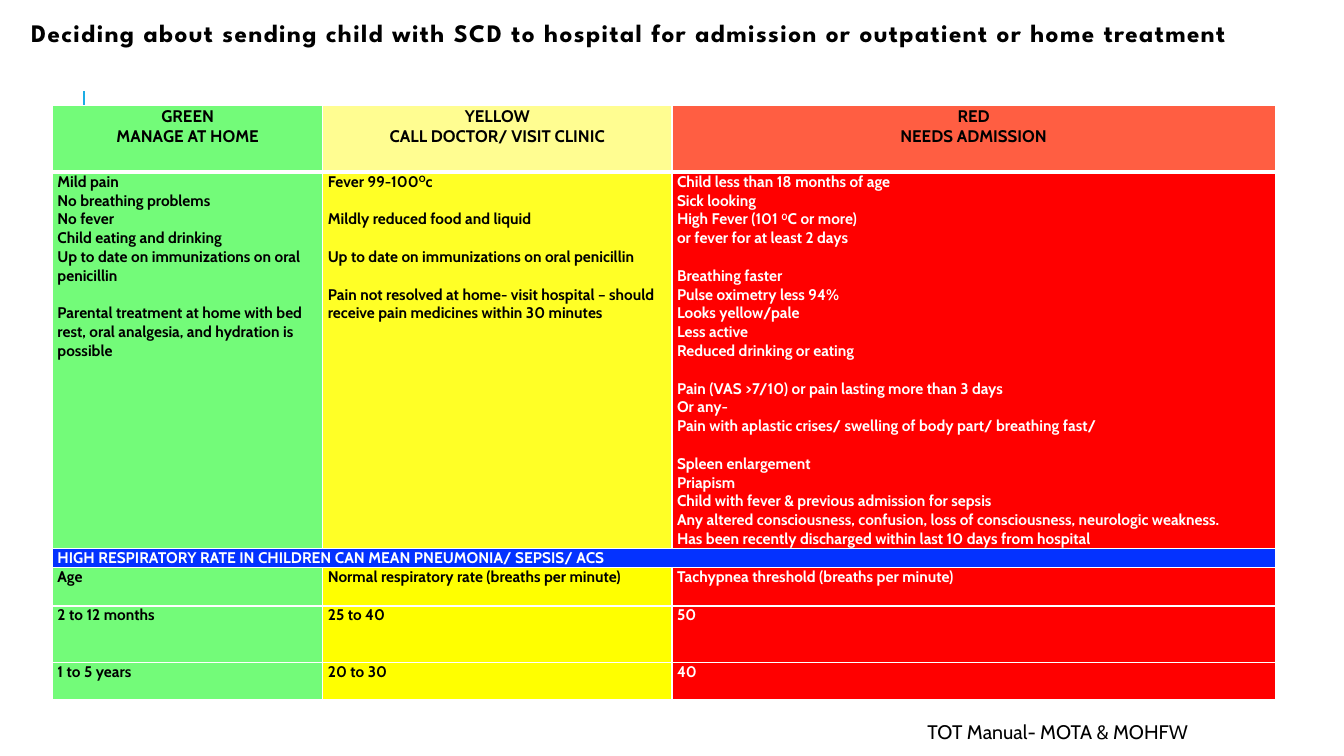
from lxml import etree
from pptx import Presentation
from pptx.dml.color import RGBColor
from pptx.enum.shapes import MSO_CONNECTOR
from pptx.enum.text import MSO_ANCHOR, PP_ALIGN
from pptx.oxml.ns import qn
from pptx.util import Inches, Pt

COLORS = {
    "black": "000000", "white": "FFFFFF", "accent": "1CADE4",
    "green": "73FB79", "pale yellow": "FFFD78", "yellow": "FFFF00",
    "coral": "FF2600", "red": "FF0000", "blue": "0432FF",
}
BODY_FONT, TITLE_FONT = "Cabin", "League Spartan"
LINE_GAP = 13.4

TABLE_BOX = (0.52, 1.05, 12.13, 5.89)
COLUMN_WIDTHS = (2.68, 3.46, 5.98)
ROW_HEIGHTS = (0.66, 3.73, 0.19, 0.38, 0.56, 0.37)

# A blank line opens a gap; text between ^ marks is superscript.
HEADERS = ("GREEN\nMANAGE AT HOME", "YELLOW\nCALL DOCTOR/ VISIT CLINIC", "RED\nNEEDS ADMISSION")
SIGNS = (
    """Mild pain
No breathing problems
No fever
Child eating and drinking
Up to date on immunizations on oral penicillin

Parental treatment at home with bed rest, oral analgesia, and hydration is possible""",
    """Fever 99-100^O^c

Mildly reduced food and liquid

Up to date on immunizations on oral penicillin

Pain not resolved at home- visit hospital – should receive pain medicines within 30 minutes""",
    """Child less than 18 months of age
Sick looking
High Fever (101 ^0^C or more)
or fever for at least 2 days

Breathing faster
Pulse oximetry less 94%
Looks yellow/pale
Less active
Reduced drinking or eating

Pain (VAS >7/10) or pain lasting more than 3 days
Or any-
Pain with aplastic crises/ swelling of body part/ breathing fast/

Spleen enlargement
Priapism
Child with fever & previous admission for sepsis
Any altered consciousness, confusion, loss of consciousness, neurologic weakness.
Has been recently discharged within last 10 days from hospital""",
)
BANNER = ("HIGH RESPIRATORY RATE IN CHILDREN CAN MEAN PNEUMONIA/ SEPSIS/ ACS", "", "")
RATES = (
    ("Age", "Normal respiratory rate (breaths per minute)", "Tachypnea threshold (breaths per minute)"),
    ("2 to 12 months", "25 to 40", "50"),
    ("1 to 5 years", "20 to 30", "40"),
)

# Fill colour and opacity in percent
HEADER_FILLS = (("green", 100), ("pale yellow", 81), ("coral", 74))
SIGN_FILLS = (("green", 100), ("yellow", 85), ("red", 100))
RATE_FILLS = (("green", 100), ("yellow", 100), ("red", 100))
COLUMN_INKS = ("black", "black", "white")
# Each row: texts, fills, text colours, size
ROWS = [
    (HEADERS, HEADER_FILLS, ("black",) * 3, 12),
    (SIGNS, SIGN_FILLS, COLUMN_INKS, 11),
    (BANNER, (("blue", 100),) * 3, ("white",) * 3, 11),
    *((texts, RATE_FILLS, COLUMN_INKS, 11) for texts in RATES),
]
BANNER_ROW = 2


def rgb(name):
    return RGBColor.from_string(COLORS[name])


def style_font(font, size, color, name=BODY_FONT, bold=False):
    font.size, font.name, font.bold = Pt(size), name, bold
    font.color.rgb = rgb(color)


def write_cell(cell, text, size, color, alignment):
    frame = cell.text_frame
    paragraph, gap = frame.paragraphs[0], 0
    for number, line in enumerate(text.split("\n")):
        if not line:
            gap = LINE_GAP
            style_font(paragraph.font, size, color, bold=True)
            continue
        if number:
            paragraph = frame.add_paragraph()
        paragraph.alignment = alignment
        if gap:
            paragraph.space_before = Pt(gap)
        gap = 0
        for index, piece in enumerate(line.split("^")):
            run = paragraph.add_run()
            run.text = piece
            style_font(run.font, size, color, bold=True)
            if index % 2:
                run._r.get_or_add_rPr().set("baseline", "30000")


def set_borders(cell, bottom):
    properties = cell._tc.get_or_add_tcPr()
    for side, width in (("lnL", 1), ("lnR", 1), ("lnT", 1), ("lnB", bottom)):
        line = etree.SubElement(properties, qn(f"a:{side}"), w=str(Pt(width)))
        fill = etree.SubElement(line, qn("a:solidFill"))
        etree.SubElement(fill, qn("a:srgbClr"), val=COLORS["white"])


def fill_cell(cell, color, opacity):
    cell.fill.solid()
    cell.fill.fore_color.rgb = rgb(color)
    if opacity < 100:
        value = cell._tc.tcPr.find(qn("a:solidFill")).find(qn("a:srgbClr"))
        etree.SubElement(value, qn("a:alpha"), val=str(opacity * 1000))


def add_triage_table(slide, box):
    frame = slide.shapes.add_table(len(ROWS), len(COLUMN_WIDTHS), *map(Inches, box))
    table = frame.table
    table.first_row = table.horz_banding = False
    for column, width in zip(table.columns, COLUMN_WIDTHS):
        column.width = Inches(box[2] * width / sum(COLUMN_WIDTHS))
    for row, height in zip(table.rows, ROW_HEIGHTS):
        row.height = Inches(box[3] * height / sum(ROW_HEIGHTS))
    for row_index, (texts, fills, inks, size) in enumerate(ROWS):
        is_header = row_index == 0
        alignment = PP_ALIGN.CENTER if is_header else PP_ALIGN.LEFT
        for column_index, (text, fill, ink) in enumerate(zip(texts, fills, inks)):
            cell = table.cell(row_index, column_index)
            cell.margin_left = cell.margin_right = Inches(0.05)
            cell.margin_top = cell.margin_bottom = 0
            set_borders(cell, 3 if is_header else 1)
            fill_cell(cell, *fill)
            write_cell(cell, text, size, ink, alignment)
    table.cell(BANNER_ROW, 0).merge(table.cell(BANNER_ROW, len(COLUMN_WIDTHS) - 1))


def add_text(slide, box, text, size, font_name, bold=False, spacing=0):
    frame = slide.shapes.add_textbox(*map(Inches, box)).text_frame
    frame.word_wrap = True
    frame.vertical_anchor = MSO_ANCHOR.MIDDLE
    frame.text = text
    run = frame.paragraphs[0].runs[0]
    style_font(run.font, size, "black", font_name, bold)
    if spacing:
        run._r.get_or_add_rPr().set("spc", str(spacing * 100))


def add_accent_line(slide, x, top, bottom):
    line = slide.shapes.add_connector(
        MSO_CONNECTOR.STRAIGHT, Inches(x), Inches(bottom), Inches(x), Inches(top))
    line.line.color.rgb = rgb("accent")
    line.line.width = Pt(1.5)
    etree.SubElement(line._element.spPr, qn("a:effectLst"))


def main():
    presentation = Presentation()
    presentation.slide_width, presentation.slide_height = Inches(13.33), Inches(7.5)
    slide = presentation.slides.add_slide(presentation.slide_layouts[6])
    add_accent_line(slide, 0.83, 0.9, 1.9)
    add_triage_table(slide, TABLE_BOX)
    add_text(slide, (0.21, 0.07, 13.31 - 0.21, 0.5),
             "Deciding about sending child with SCD to hospital for admission or outpatient or home treatment",
             18, TITLE_FONT, bold=True, spacing=1)
    add_text(slide, (9.1, 7.09, 3.94, 0.34), "TOT Manual- MOTA & MOHFW", 14, BODY_FONT)
    presentation.save("out.pptx")


if __name__ == "__main__":
    main()
